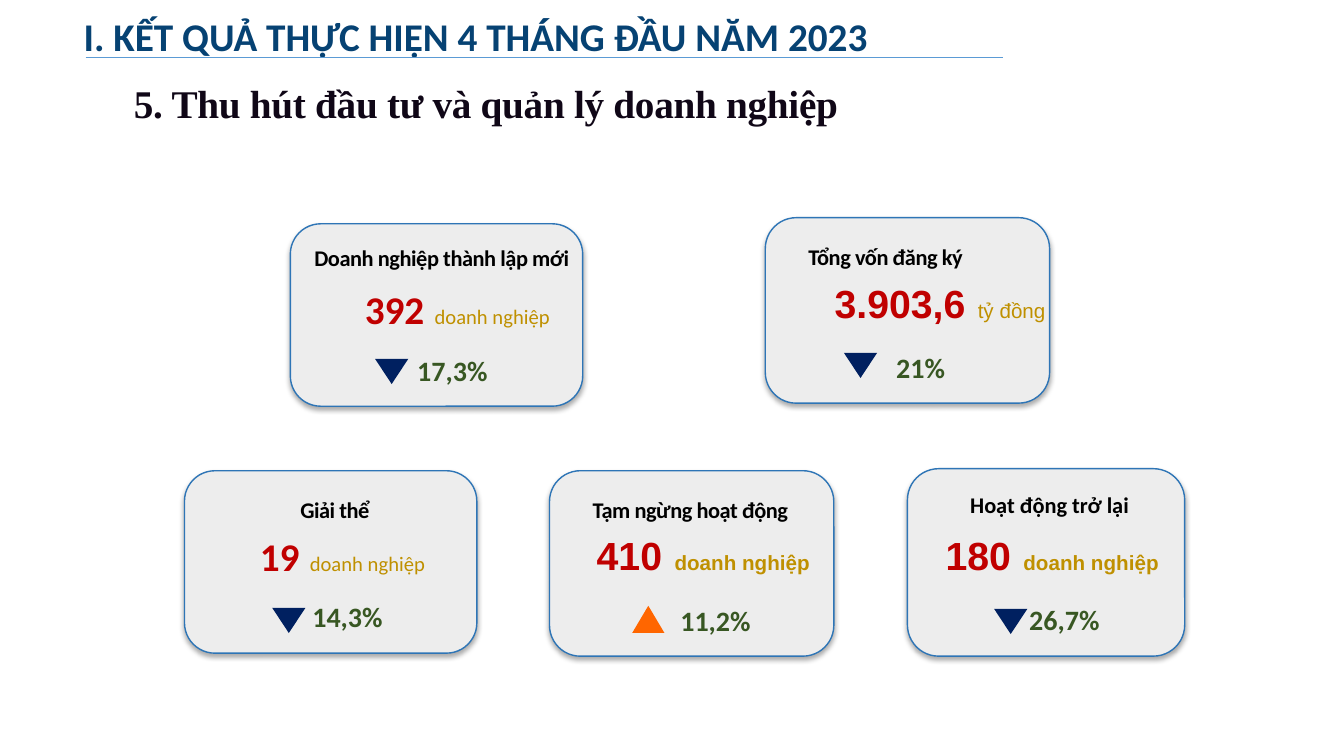
from pptx import Presentation
from pptx.util import Inches, Pt
from pptx.dml.color import RGBColor
from pptx.enum.shapes import MSO_SHAPE as Kind, MSO_CONNECTOR as Link
from pptx.enum.text import MSO_ANCHOR as Anchor, MSO_AUTO_SIZE as Fit, PP_ALIGN as Align
from pptx.oxml import parse_xml
from pptx.oxml.ns import nsdecls
from lxml.etree import SubElement

HUES = {
    "title": "064273", "sub": "100717", "rule": "5B9BD5",
    "card": "EDEDED", "edge": "2E75B6", "label": "000000",
    "value": "C00000", "unit": "BF9000", "rate": "385723",
    "down": "002060", "up": "FF6600",
}
SHADE = (
    f'<a:effectLst {nsdecls("a")}><a:outerShdw blurRad="{Pt(3.5)}" dist="{Pt(2.2)}" '
    'dir="5400000" algn="t" rotWithShape="0"><a:srgbClr val="000000">'
    '<a:alpha val="32000"/></a:srgbClr></a:outerShdw></a:effectLst>'
)
CARDS = [
    dict(box=(7.59, 2.16, 2.82, 1.84), label="Tổng vốn đăng ký", head=(0.33, 0.2, 2.05),
         value="3.903,6", unit="tỷ đồng", main=(0.59, 0.51, 2.31), face="Arial",
         rate="21%", foot=(1.2, 1.27, 0.69), mark=(0.78, 1.34)),
    dict(box=(2.88, 2.22, 2.9, 1.81), label="Doanh nghiệp thành lập mới", head=(0.14, 0.15, 2.76),
         value="392", main=(0.64, 0.51, 2.05),
         rate="17,3%", foot=(1.16, 1.24, 0.9), mark=(0.84, 1.34)),
    dict(box=(5.45, 4.67, 2.82, 1.84), label="Tạm ngừng hoạt động", head=(0.33, 0.2, 2.5),
         value="410", main=(0.37, 0.5, 2.34), face="Arial", bold=True,
         rate="11,2%", foot=(1.2, 1.27, 0.9), mark=(0.82, 1.34), up=True),
    dict(box=(9, 4.65, 2.75, 1.86), label="Hoạt động trở lại", head=(0.51, 0.17, 1.8),
         track=0, align=Align.CENTER,
         value="180", main=(0.28, 0.52, 2.34), face="Arial", bold=True,
         rate="26,7%", foot=(1.11, 1.28, 0.9), mark=(0.86, 1.39)),
    dict(box=(1.83, 4.67, 2.9, 1.81), label="Giải thể", head=(1.05, 0.2, 0.9),
         value="19", main=(0.65, 0.51, 1.86),
         rate="14,3%", foot=(1.17, 1.23, 0.9), mark=(0.87, 1.36)),
]


def tint(name):
    return RGBColor.from_string(HUES[name])


def write(para, text, size, hue, face="Calibri", bold=True, track=0):
    run = para.add_run()
    run.text = text
    font = run.font
    font.name, font.size, font.bold = face, Pt(size), bold
    font.color.rgb = tint(hue)
    if track:
        run._r.get_or_add_rPr().set("spc", str(round(track * 100)))


def field(slide, left, top, width, height, align=Align.LEFT):
    frame = slide.shapes.add_textbox(*map(Inches, (left, top, width, height))).text_frame
    frame.word_wrap = False
    frame.auto_size = Fit.SHAPE_TO_FIT_TEXT
    para = frame.paragraphs[0]
    para.alignment = align
    return para


def block(slide, kind, box, fill):
    shape = slide.shapes.add_shape(kind, *map(Inches, box))
    shape.shadow.inherit = False
    shape.fill.solid()
    shape.fill.fore_color.rgb = tint(fill)
    shape.line.fill.background()
    return shape


def header(slide, left, top, width, height):
    title = slide.shapes.title
    title.left, title.top, title.width, title.height = map(Inches, (left, top, width, height))
    frame = title.text_frame
    frame.word_wrap, frame.auto_size = True, Fit.NONE
    frame.vertical_anchor = Anchor.MIDDLE
    para = frame.paragraphs[0]
    para.alignment = Align.LEFT
    write(para, "I. KẾT QUẢ THỰC HIỆN 4 THÁNG ĐẦU NĂM 2023", 28, "title")
    level = Inches(top + 0.52)
    rule = slide.shapes.add_connector(
        Link.STRAIGHT, Inches(left + 0.12), level, Inches(left + 9.22), level)
    rule.line.color.rgb = tint("rule")
    rule.line.width = Pt(1)
    SubElement(rule._element.spPr, "{http://schemas.openxmlformats.org/drawingml/2006/main}effectLst")
    para = field(slide, left + 0.5, top + 0.69, 7.29, 0.53)
    write(para, "5. Thu hút đầu tư và quản lý doanh nghiệp", 28, "sub",
          face="Times New Roman", track=-0.2)


def card(slide, box, label, head, value, main, rate, foot, mark, unit="doanh nghiệp",
         face="Calibri", bold=False, track=-0.3, align=Align.LEFT, up=False):
    left, top = box[:2]

    def place(spot, height, align=Align.LEFT):
        return field(slide, left + spot[0], top + spot[1], spot[2], height, align)

    panel = block(slide, Kind.ROUNDED_RECTANGLE, box, "card")
    panel.line.color.rgb = tint("edge")
    panel.line.width = Pt(1)
    props = panel._element.spPr
    props.remove(props[-1])
    props.append(parse_xml(SHADE))

    write(place(head, 0.64, align), label, 16, "label", track=track)
    para = place(main, 0.64)
    write(para, value, 28, "value", face=face)
    write(para, " ", 32, "rate", face=face)
    write(para, unit, 14.7, "unit", face=face, bold=bold)
    write(place(foot, 0.44), rate, 20, "rate")
    kind, size, hue = ((Kind.ISOSCELES_TRIANGLE, (0.32, 0.27), "up") if up
                       else (Kind.FLOWCHART_MERGE, (0.33, 0.25), "down"))
    block(slide, kind, (left + mark[0], top + mark[1], *size), hue)


def main():
    deck = Presentation()
    deck.slide_width, deck.slide_height = Inches(13.33), Inches(7.5)
    slide = deck.slides.add_slide(deck.slide_layouts[5])
    header(slide, 0.73, 0.05, 12.3, 0.62)
    for data in CARDS:
        card(slide, **data)
    deck.save("out.pptx")


if __name__ == "__main__":
    main()
